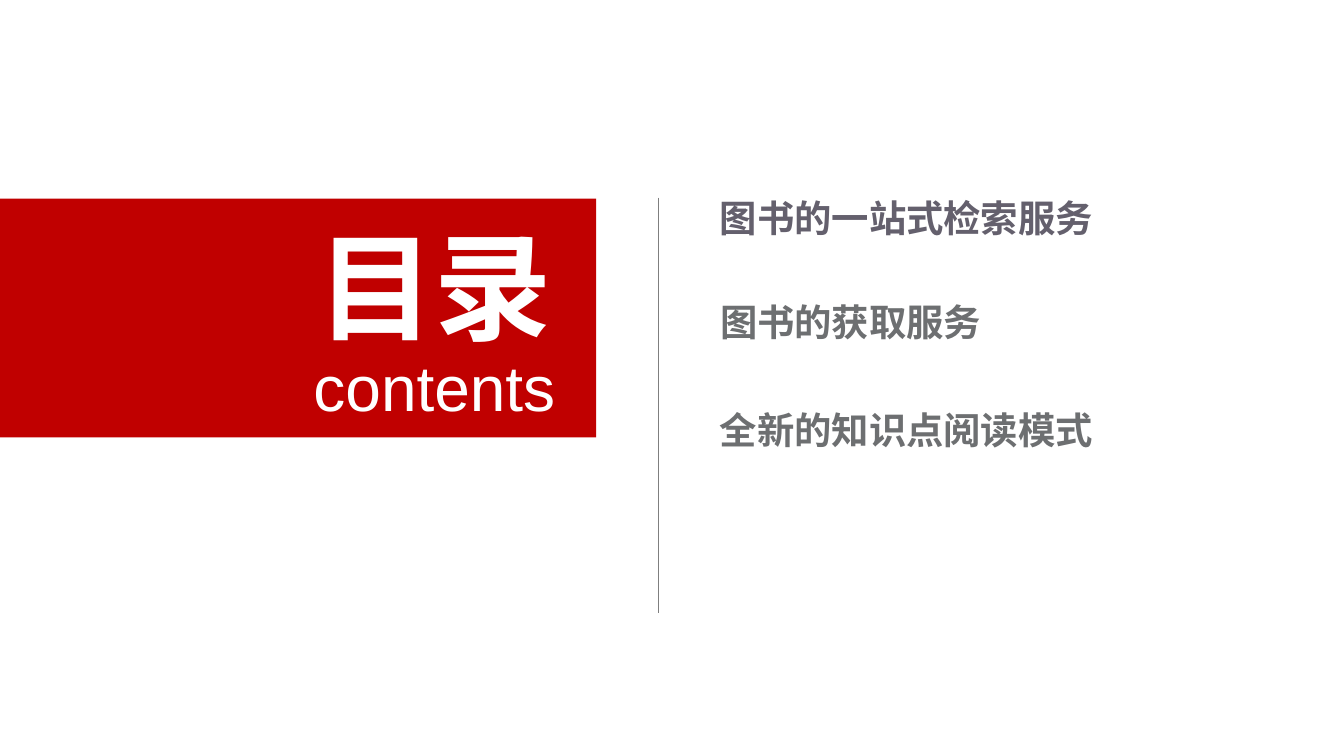
from dataclasses import dataclass

from lxml import etree
from pptx import Presentation
from pptx.dml.color import RGBColor
from pptx.enum import shapes, text
from pptx.oxml import ns
from pptx.util import Inches, Pt


@dataclass(frozen=True)
class Theme:
    font: str = "Arial"
    red: str = "C00000"
    white: str = "FFFFFF"
    rule: str = "7F7F7F"
    first_item: str = "64606D"
    item: str = "6D6F71"
    title_size: int = 88
    subtitle_size: int = 48
    item_size: int = 28


@dataclass(frozen=True)
class Label:
    words: str
    left: float
    top: float
    width: float
    height: float
    size: int
    color: str
    bold: bool = True
    align: text.PP_ALIGN = text.PP_ALIGN.LEFT
    spacing: float = 1.0


THEME = Theme()
CENTER = text.PP_ALIGN.CENTER
ITEM_LEFT = 7.5

TITLE = Label("目录", 3.29, 2.23, 2.47, 1.48, THEME.title_size, THEME.white, align=CENTER)
LABELS = [
    Label("contents", 3.25, 3.62, 2.55, 0.81, THEME.subtitle_size, THEME.white, False, CENTER),
    Label("图书的一站式检索服务", ITEM_LEFT, 1.89, 3.93, 0.55, THEME.item_size, THEME.first_item, spacing=1.3),
    Label("图书的获取服务", ITEM_LEFT, 3.12, 2.75, 0.47, THEME.item_size, THEME.item),
    Label("全新的知识点阅读模式", ITEM_LEFT, 4.24, 3.93, 0.47, THEME.item_size, THEME.item),
]


def write_label(sp, label: Label) -> None:
    sp.left, sp.top = Inches(label.left), Inches(label.top)
    sp.width, sp.height = Inches(label.width), Inches(label.height)
    tf = sp.text_frame
    tf.margin_left = tf.margin_right = tf.margin_top = tf.margin_bottom = 0
    tf.vertical_anchor = text.MSO_ANCHOR.TOP
    tf.word_wrap = False
    tf.auto_size = text.MSO_AUTO_SIZE.SHAPE_TO_FIT_TEXT
    p = tf.paragraphs[0]
    p.text = label.words
    p.alignment = label.align
    p.line_spacing = label.spacing
    p.font.name = THEME.font
    p.font.size = Pt(label.size)
    p.font.bold = label.bold
    p.font.color.rgb = RGBColor.from_string(label.color)


def add_band(s) -> None:
    sp = s.shapes.add_shape(
        shapes.MSO_SHAPE.RECTANGLE, 0, Inches(2.07), Inches(6.21), Inches(2.49)
    )
    sp.shadow.inherit = False
    sp.fill.solid()
    sp.fill.fore_color.rgb = RGBColor.from_string(THEME.red)
    sp.line.fill.background()


def add_divider(s) -> None:
    x = Inches(6.86)
    line = s.shapes.add_connector(
        shapes.MSO_CONNECTOR.STRAIGHT, x, Inches(2.06), x, Inches(6.39)
    )
    line.line.color.rgb = RGBColor.from_string(THEME.rule)
    line.line.width = Pt(1)
    etree.SubElement(line.element.spPr, ns.qn("a:effectLst"))


def main() -> None:
    prs = Presentation()
    prs.slide_width, prs.slide_height = Inches(14), Inches(7.88)
    s = prs.slides.add_slide(prs.slide_layouts[5])
    title = s.shapes.title
    add_band(s)
    title.element.getparent().append(title.element)
    write_label(title, TITLE)
    add_divider(s)
    for label in LABELS:
        write_label(s.shapes.add_textbox(0, 0, 0, 0), label)
    prs.save("out.pptx")


if __name__ == "__main__":
    main()
